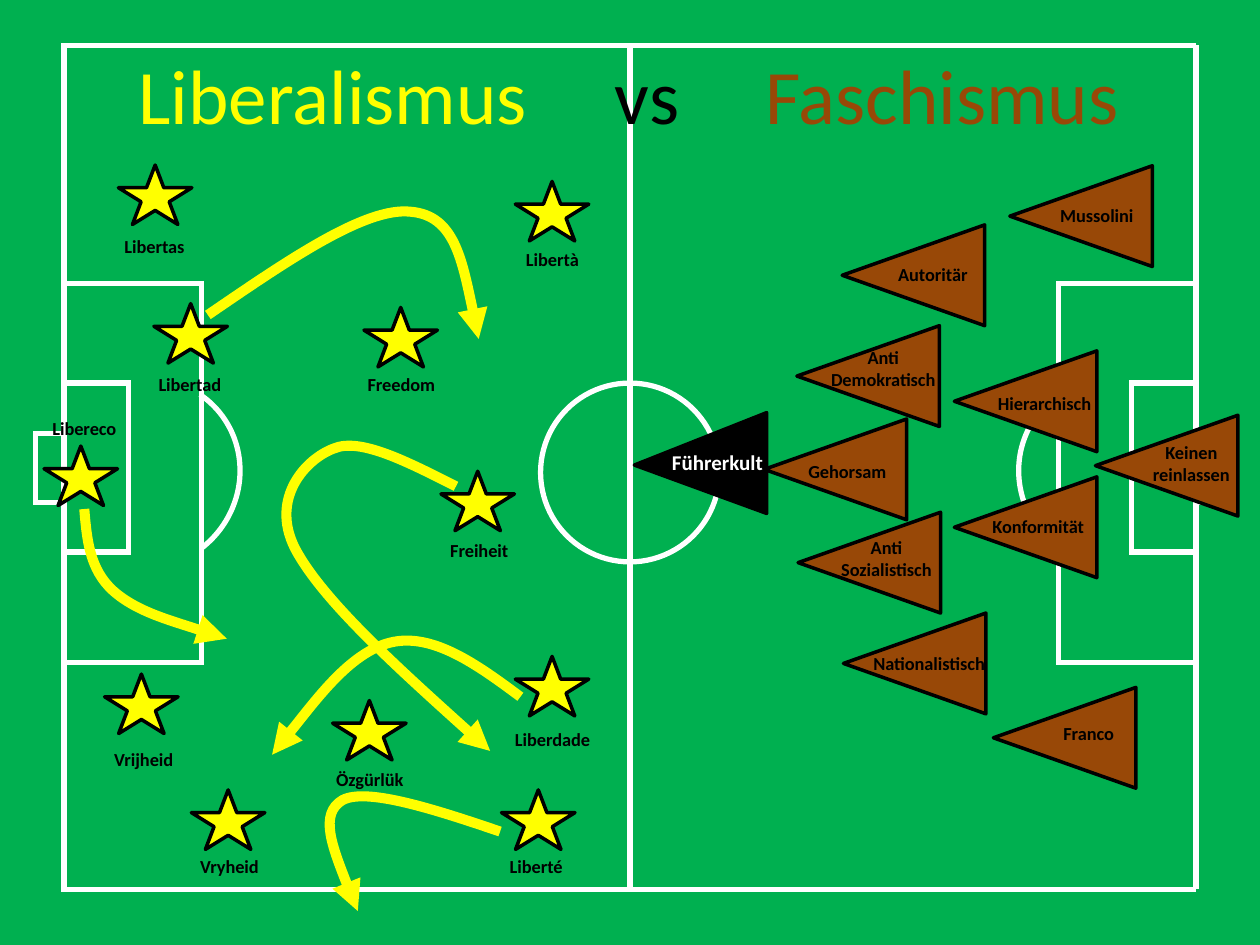
"""Build a football-pitch slide setting Liberalismus against Faschismus."""
from lxml.etree import SubElement
from pptx import Presentation
from pptx.dml.color import RGBColor
from pptx.enum.shapes import MSO_CONNECTOR, MSO_SHAPE as SHAPE
from pptx.enum.text import MSO_AUTO_SIZE as AUTO, PP_ALIGN as ALIGN
from pptx.oxml.ns import qn
from pptx.util import Pt

GREEN, WHITE, YELLOW, BROWN, BLACK = "00B050", "FFFFFF", "FFFF00", "984807", "000000"
W, H = 720, 540
LEFT, RIGHT, TOP, BOTTOM = 36.6, 683.4, 25.9, 508.3
CAP = 1.5

# inner x on the left half, top, bottom
BOXES = [(115.2, 162, 378.7), (73.4, 218.9, 315.4), (20.2, 247.7, 287.3)]
# left, rotation, start angle, end angle
ARCS = [(28.8, 49.5, 255.63, 3), (583.2, 310.5, 177, 284.37)]
# text, colour, centre of the word from the left of the title
TITLE = [("Liberalismus", YELLOW, 154.3), ("vs", BLACK, 333.7), ("Faschismus", BROWN, 502.3)]
# box, then the start point and the Bézier points
MOVES = [
    ((118.8, 120.2, 154.1, 73.4),
     [(118.8, 180), (164.2, 149), (208.8, 118.1), (234.7, 121),
      (259.9, 123.1), (266.4, 158.4), (273.6, 193.7)]),
    ((155.5, 366.5, 141.8, 64.8),
     [(297.4, 398.2), (272.2, 379.4), (247, 361.4), (223.2, 367.2),
      (199.4, 373), (155.5, 431.3), (155.5, 431.3)]),
    ((48.2, 290.9, 81.4, 74.2),
     [(48.2, 290.9), (49.7, 308.2), (51.1, 325.4), (64.8, 337.7),
      (78.5, 349.9), (129.6, 365), (129.6, 365)]),
    ((163.4, 254.9, 116.6, 174.2),
     [(260.6, 277.9), (233.3, 264.2), (205.9, 249.8), (190.8, 256.3), (175, 262.1),
      (154.1, 284.4), (168.5, 313.2), (183.6, 342), (231.8, 385.9), (280.1, 429.1)]),
    ((189.4, 455, 96.5, 65.5),
     [(285.8, 475.2), (247.7, 462.2), (209.5, 450), (195.8, 457.2),
      (182.2, 465.1), (193, 493.2), (204.5, 520.6)]),
]
# name, star left and top, label left, top and width
STARS = [
    ("Libertad", 88, 173.5, 83, 209.5, 51),
    ("Freedom", 208, 175.7, 202.3, 209.5, 54),
    ("Freiheit", 252, 269.3, 249.8, 304.6, 48.2),
    ("Vrijheid", 59.8, 385.2, 57.6, 424.1, 49),
    ("Liberté", 286.6, 451.4, 283.7, 485.3, 45.4),
    ("Libertas", 67.7, 94.3, 63.4, 131, 49.7),
    ("Özgürlük", 190.1, 400.3, 184.3, 435.6, 54),
    ("Libertà", 294.5, 103.7, 293, 138.2, 45.4),
    ("Vryheid", 109.4, 451.4, 106.6, 485.3, 49),
    ("Libereco", 25.2, 254.9, 22.3, 234.7, 51.8),
    ("Liberdade", 294.5, 375.1, 286.6, 412.6, 58.3),
]
# lines, triangle left and top, label left, top and width
TRIANGLES = [
    (["Führerkult"], 371.5, 226.8, 371.5, 253.4, 77),
    (["Anti", "Demokratisch"], 467.3, 174.2, 463.7, 194.4, 82.1),
    (["Autoritär"], 493.2, 116.6, 498.2, 146.9, 69.8),
    (["Mussolini"], 589, 82.8, 590.4, 113, 72.7),
    (["Anti", "Sozialistisch"], 468, 280.8, 463.7, 303.1, 85.7),
    (["Nationalistisch"], 493.9, 338.4, 480.2, 369.4, 101.5),
    (["Franco"], 579.6, 380.9, 594, 409, 56.2),
    (["Gehorsam"], 448.6, 227.5, 449.3, 259.2, 69.8),
    (["Hierarchisch"], 557.3, 188.6, 553, 220.3, 87.8),
    (["Keinen", "reinlassen"], 637.9, 225.4, 636.5, 248.4, 88.6),
    (["Konformität"], 557.3, 260.6, 553, 290.9, 80.6),
]


def rgb(color):
    return RGBColor.from_string(color)


def paint(sp, fill, line, width):
    sp.shadow.inherit = False
    if fill:
        sp.fill.solid()
        sp.fill.fore_color.rgb = rgb(fill)
    else:
        sp.fill.background()
    sp.line.color.rgb = rgb(line)
    sp.line.width = Pt(width)


def add_shape(shapes, kind, box, fill, line, width):
    sp = shapes.add_shape(kind, *map(Pt, box))
    paint(sp, fill, line, width)
    return sp


def add_line(shapes, *ends):
    cn = shapes.add_connector(MSO_CONNECTOR.STRAIGHT, *map(Pt, ends))
    cn.line.color.rgb = rgb(WHITE)
    cn.line.width = Pt(3)
    SubElement(cn._element.spPr, qn("a:effectLst"))


def add_run(p, text, size, color, bold):
    r = p.add_run()
    r.text = text
    r.font.name = "Calibri"
    r.font.size = Pt(size)
    r.font.bold = bold
    r.font.color.rgb = rgb(color)


def add_label(shapes, lines, x, y, w, size=10.5, color=BLACK, wrap=True):
    tf = shapes.add_textbox(*map(Pt, (x, y, w, 7.2 + 1.22 * size * len(lines)))).text_frame
    tf.word_wrap = wrap
    tf.auto_size = AUTO.SHAPE_TO_FIT_TEXT
    for i, text in enumerate(lines):
        p = tf.add_paragraph() if i else tf.paragraphs[0]
        p.alignment = ALIGN.CENTER
        add_run(p, text, size, color, True)


def add_pitch(shapes):
    for y in (TOP, BOTTOM):
        add_line(shapes, LEFT - CAP, y, RIGHT, y)
    for x in (LEFT, W / 2, RIGHT):
        add_line(shapes, x, TOP, x, BOTTOM)
    for inner, top, bottom in BOXES:
        for edge, x in ((LEFT, inner), (RIGHT, W - inner)):
            for y in (top, bottom):
                add_line(shapes, edge, y, x, y)
            add_line(shapes, x, top - CAP, x, bottom + CAP)
    add_shape(shapes, SHAPE.OVAL, (308.9, 218.9, 102.2, 102.2), None, WHITE, 3)
    for x, rotation, *angles in ARCS:
        sp = add_shape(shapes, SHAPE.ARC, (x, 215.3, 107.3, 110.9), None, WHITE, 3)
        sp.rotation = rotation
        for i, angle in enumerate(angles):
            sp.adjustments[i] = angle * 0.6


def add_title(shapes):
    tf = shapes.add_textbox(Pt(36), Pt(21.6), Pt(648), Pt(72.7)).text_frame
    tf.word_wrap = True
    tf.margin_left = tf.margin_right = 0
    tf.margin_top = Pt(5.6)
    p = tf.paragraphs[0]
    p.alignment = ALIGN.LEFT
    tabs = SubElement(p._p.get_or_add_pPr(), qn("a:tabLst"))
    for text, color, centre in TITLE:
        SubElement(tabs, qn("a:tab"), pos=str(Pt(centre)), algn="ctr")
        add_run(p, "\t" + text, 44, color, False)


def add_move(shapes, box, points):
    x, y, w, h = map(Pt, box)
    builder = shapes.build_freeform(x, y)
    builder.add_line_segments([(x + w, y + h)], close=False)
    sp = builder.convert_to_shape()
    paint(sp, None, YELLOW, 5.75)
    SubElement(sp.line._get_or_add_ln(), qn("a:tailEnd"), type="triangle")
    outline = sp._element.find(".//" + qn("a:path"))
    for child in list(outline):
        outline.remove(child)
    for i, (px, py) in enumerate(points):
        if i == 0 or i % 3 == 1:
            step = SubElement(outline, qn("a:cubicBezTo" if i else "a:moveTo"))
        SubElement(step, qn("a:pt"), x=str(Pt(px) - x), y=str(Pt(py) - y))


def main():
    prs = Presentation()
    prs.slide_width, prs.slide_height = Pt(W), Pt(H)
    s = prs.slides.add_slide(prs.slide_layouts[6])
    s.background.fill.solid()
    s.background.fill.fore_color.rgb = rgb(GREEN)
    add_pitch(s.shapes.add_group_shape().shapes)
    add_title(s.shapes)
    for box, points in MOVES:
        add_move(s.shapes, box, points)
    for name, x, y, *label in STARS:
        player = s.shapes.add_group_shape().shapes
        add_shape(player, SHAPE.STAR_5_POINT, (x, y, 42, 34), YELLOW, BLACK, 2)
        add_label(player, [name], *label, wrap=False)
    for i, (lines, x, y, *label) in enumerate(TRIANGLES):
        box = (x, y, 57.6, 81.4 if i else 75.6)
        sp = add_shape(s.shapes, SHAPE.ISOSCELES_TRIANGLE, box, BROWN if i else BLACK, BLACK, 2)
        sp.rotation = 270
        sp.adjustments[0] = 0.5 if i else 0.48
    for i, (lines, x, y, *label) in enumerate(TRIANGLES):
        add_label(s.shapes, lines, *label, *(() if i else (12, WHITE)))
    prs.save("out.pptx")


if __name__ == "__main__":
    main()
